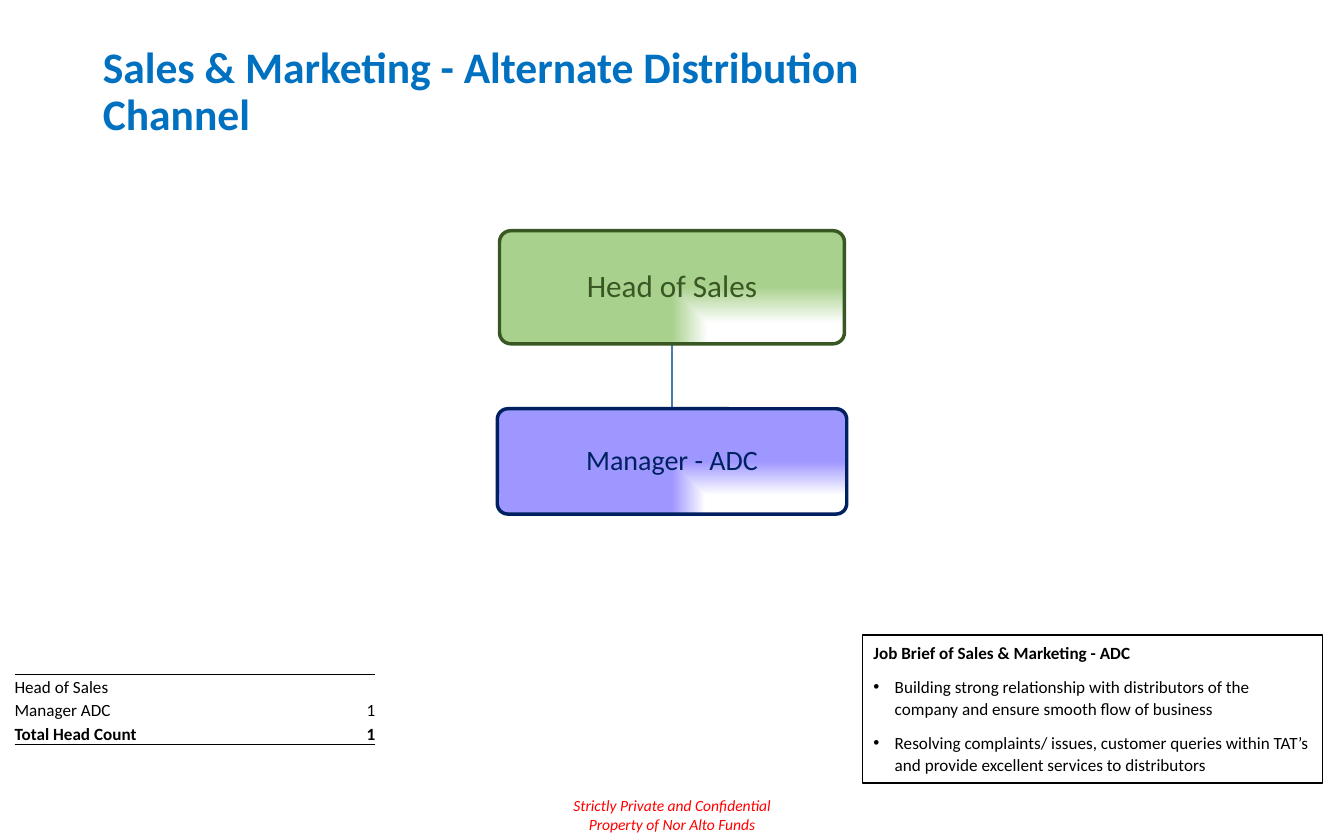
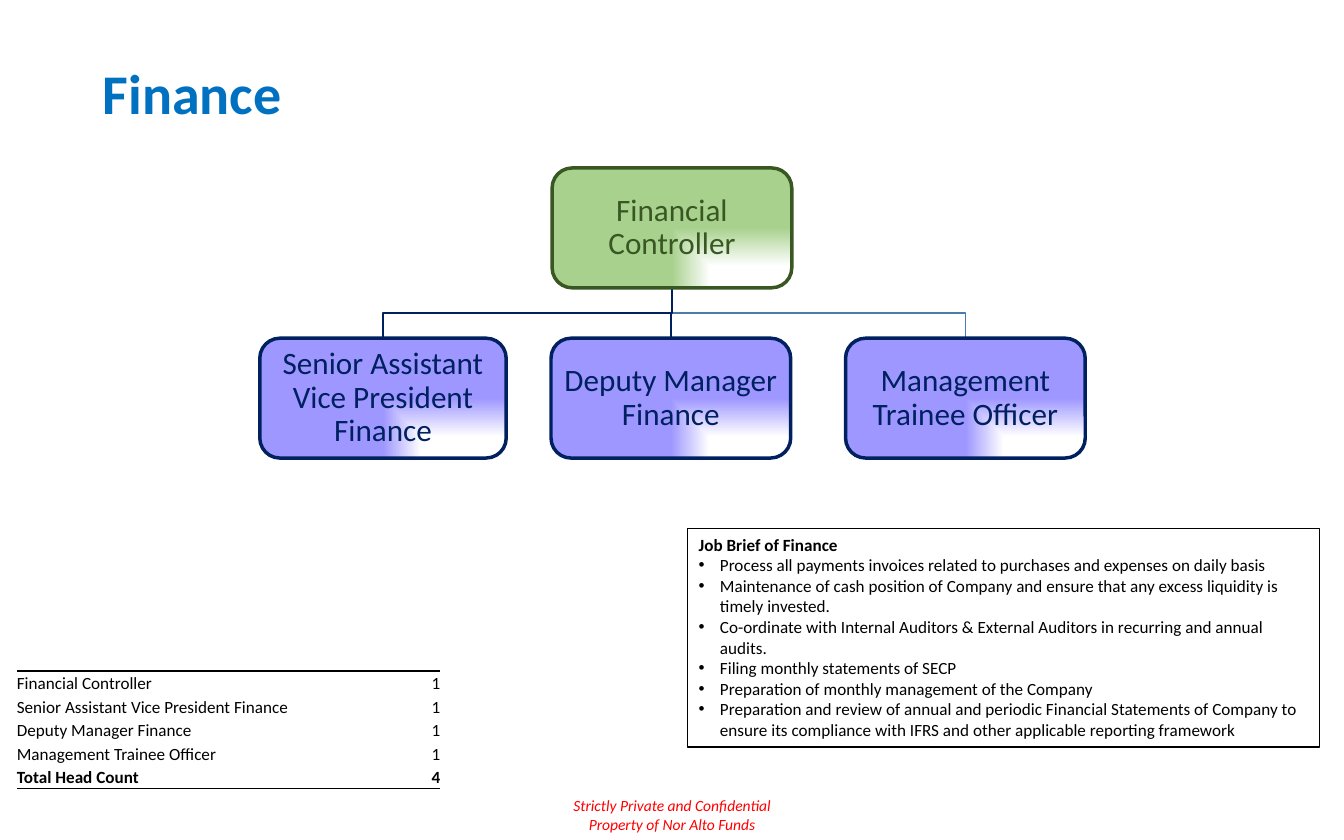
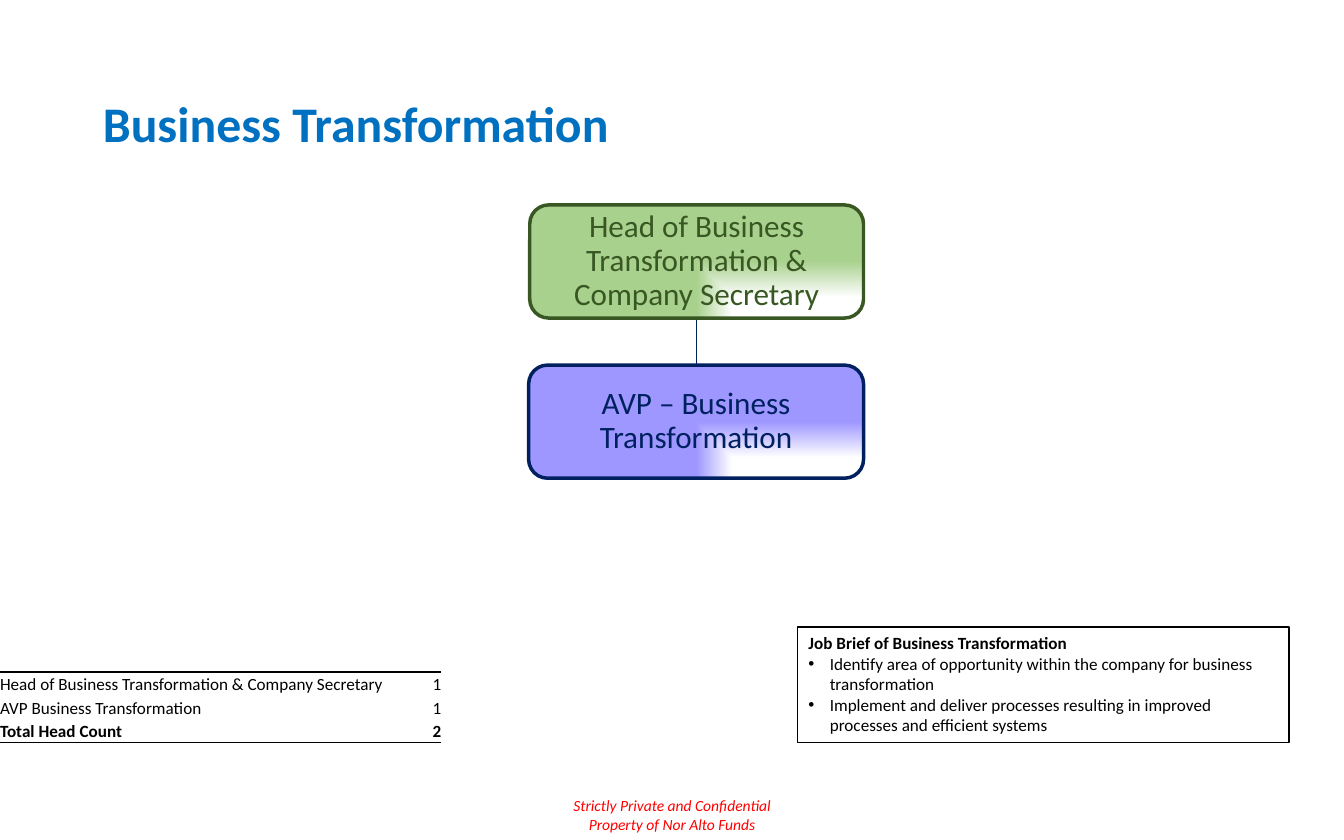
from lxml import etree
from pptx import Presentation
from pptx.dml.color import RGBColor
from pptx.enum.shapes import MSO_CONNECTOR, MSO_SHAPE
from pptx.enum.text import MSO_ANCHOR, MSO_AUTO_SIZE, PP_ALIGN
from pptx.oxml import parse_xml
from pptx.oxml.ns import nsdecls, qn
from pptx.util import Inches, Pt

ROUNDED, RECTANGLE = MSO_SHAPE.ROUNDED_RECTANGLE, MSO_SHAPE.RECTANGLE
STRAIGHT = MSO_CONNECTOR.STRAIGHT
LEFT, CENTER, RIGHT = PP_ALIGN.LEFT, PP_ALIGN.CENTER, PP_ALIGN.RIGHT
TOP, MIDDLE, BOTTOM = MSO_ANCHOR.TOP, MSO_ANCHOR.MIDDLE, MSO_ANCHOR.BOTTOM
FIT_SHAPE = MSO_AUTO_SIZE.SHAPE_TO_FIT_TEXT

# Shared look
FONT = "Calibri"
COLORS = {
    "title": "0070C0", "footer": "FF0000", "text": "000000", "paper": "FFFFFF",
    "head_fill": "A9D18E", "head_line": "385723",
    "member_fill": "9E97FF", "member_line": "002060", "link": "497CAB",
}
FOOTER = ["Strictly Private and Confidential", "Property of Nor Alto Funds"]

# Grid of 12 columns by 7.5 rows
SLIDE_WIDTH, SLIDE_HEIGHT = Inches(12), Inches(7.5)
COLUMN, ROW = SLIDE_WIDTH / 12, SLIDE_HEIGHT / 7.5
TABLE_ROW = 0.21


def place(frame):
    left, top, width, height = frame
    return (round(left * COLUMN), round(top * ROW),
            round(width * COLUMN), round(height * ROW))


def color(name):
    return RGBColor.from_string(COLORS[name])


def write(para, text, size, ink="text", align=LEFT, bold=False, italic=False, **spacing):
    """Fill one paragraph with a single styled run."""
    for name, value in {"alignment": align, **spacing}.items():
        setattr(para, name, value)
    if not text:
        etree.SubElement(para._p, qn("a:endParaRPr"), sz=str(size * 100))
        return
    span = para.add_run()
    span.text = text
    formats = {"name": FONT, "size": Pt(size), "bold": bold, "italic": italic}
    for name, value in formats.items():
        setattr(span.font, name, value)
    span.font.color.rgb = color(ink)


def set_frame(box, **formats):
    for name, value in formats.items():
        setattr(box.text_frame, name, value)
    return box.text_frame


def margins(size):
    return {f"margin_{side}": Inches(size) for side in ("left", "top", "right", "bottom")}


def set_line(shape, ink, width):
    shape.line.color.rgb = color(ink)
    shape.line.width = Pt(width)


# Title and footer
def add_title(page, text, size, frame):
    box = page.shapes.add_textbox(*place(frame))
    body = set_frame(box, word_wrap=True, vertical_anchor=MIDDLE)
    write(body.paragraphs[0], text, size, "title", bold=True, line_spacing=0.9)


def add_footer(page):
    box = page.shapes.add_textbox(*place((5.01, 7.06, 1.98, 0.44)))
    body = set_frame(box, word_wrap=False, auto_size=FIT_SHAPE)
    for index, line in enumerate(FOOTER):
        para = body.add_paragraph() if index else body.paragraphs[0]
        write(para, line, 10, "footer", CENTER, italic=True)


# Organisation chart
def fill_corner_gradient(shape, ink):
    stops = "".join(
        f'<a:gs pos="{share * 1000}"><a:srgbClr val="{COLORS[name]}"/></a:gs>'
        for share, name in ((0, "paper"), (36, "paper"), (100, ink)))
    gradient = parse_xml(
        f'<a:gradFill {nsdecls("a")} rotWithShape="1"><a:gsLst>{stops}</a:gsLst>'
        '<a:path path="rect"><a:fillToRect l="100000" t="100000"/></a:path>'
        '<a:tileRect r="-100000" b="-100000"/></a:gradFill>')
    shape.fill.background()
    properties = shape._element.spPr
    properties.replace(properties.find(qn("a:noFill")), gradient)


def add_role(page, role, text, frame, size, corner, inset):
    box = page.shapes.add_shape(ROUNDED, *place(frame))
    box.shadow.inherit = False
    box.adjustments[0] = corner
    fill_corner_gradient(box, f"{role}_fill")
    set_line(box, f"{role}_line", 2.25)
    body = set_frame(box, word_wrap=True, vertical_anchor=MIDDLE, **margins(inset))
    write(body.paragraphs[0], text, size, f"{role}_line", CENTER, line_spacing=0.9)


def add_link(page, head, member, ink, bent):
    """Join the bottom of the head to the top of a member."""
    left, top, width, height = place(head)
    member_left, end_y, member_width, _ = place(member)
    start_x, start_y = left + width // 2, top + height
    end_x = member_left + member_width // 2
    if bent:
        middle_y = (start_y + end_y) // 2
        builder = page.shapes.build_freeform(start_x, start_y)
        builder.add_line_segments(
            [(start_x, middle_y), (end_x, middle_y), (end_x, end_y)], close=False)
        link = builder.convert_to_shape()
        link.shadow.inherit = False
        link.fill.background()
    else:
        link = page.shapes.add_connector(STRAIGHT, start_x, start_y, start_x, end_y)
        etree.SubElement(link._element.spPr, qn("a:effectLst"))
    set_line(link, ink, 1)


def add_org_chart(page, head, members, member_size=20, corner=0.1667, inset=0.01):
    head_text, head_frame = head
    for _, frame, ink in members:
        add_link(page, head_frame, frame, ink, bent=len(members) > 1)
    add_role(page, "head", head_text, head_frame, 20, corner, inset)
    for text, frame, _ in members:
        add_role(page, "member", text, frame, member_size, corner, inset)


# Head count table
def set_borders(cell, ruled):
    properties = cell._tc.get_or_add_tcPr()
    for index, side in enumerate("LRTB"):
        paint = "<a:noFill/>"
        if side in ruled:
            paint = f'<a:solidFill><a:srgbClr val="{COLORS["text"]}"/></a:solidFill>'
        properties.insert(index, parse_xml(
            f'<a:ln{side} {nsdecls("a")} w="{Pt(1)}">{paint}</a:ln{side}>'))


def add_head_count(page, left, top, widths, counts):
    rows = counts + [("Total Head Count", str(sum(int(count or 0) for _, count in counts)))]
    frame = (left, top, sum(widths), TABLE_ROW * len(rows))
    table = page.shapes.add_table(len(rows), 2, *place(frame)).table
    table.first_row = table.horz_banding = False
    for column, width in zip(table.columns, widths):
        column.width = round(width * COLUMN)
    last = len(rows) - 1
    for index, values in enumerate(rows):
        table.rows[index].height = round(TABLE_ROW * ROW)
        ruled = {0: "T", last: "B"}.get(index, "")
        for cell, text, align in zip(table.rows[index].cells, values, (LEFT, RIGHT)):
            cell.fill.background()
            for name, value in {"vertical_anchor": BOTTOM, **margins(0)}.items():
                setattr(cell, name, value)
            set_borders(cell, ruled)
            write(cell.text_frame.paragraphs[0], text, 11, align=align, bold=index == last)


# Job brief
def add_bullet(para):
    properties = para._p.get_or_add_pPr()
    indent = Inches(0.19)
    properties.set("marL", str(indent))
    properties.set("indent", str(-indent))
    etree.SubElement(properties, qn("a:buFont"), typeface="Arial")
    etree.SubElement(properties, qn("a:buChar"), char="•")


def add_job_brief(page, unit, duties, frame, **spacing):
    box = page.shapes.add_shape(RECTANGLE, *place(frame))
    box.shadow.inherit = False
    box.fill.solid()
    box.fill.fore_color.rgb = color("paper")
    set_line(box, "text", 1)
    body = set_frame(box, word_wrap=True, vertical_anchor=TOP, auto_size=FIT_SHAPE)
    write(body.paragraphs[0], f"Job Brief of {unit}", 11, bold=True, **spacing)
    for duty in duties:
        para = body.add_paragraph()
        add_bullet(para)
        write(para, duty, 11, **spacing)


def add_page(deck, title, size, frame):
    page = deck.slides.add_slide(deck.slide_layouts[6])
    add_footer(page)
    add_title(page, title, size, frame)
    return page


def build_distribution(deck):
    page = add_page(deck, "Sales & Marketing - Alternate Distribution Channel", 28,
                    (0.82, 0.4, 8.01, 0.86))
    add_org_chart(page, ("Head of Sales", (4.46, 2.06, 3.08, 1.01)),
                  [("Manager - ADC", (4.44, 3.65, 3.12, 0.94), "link")],
                  member_size=18, corner=0.1, inset=0.08)
    add_head_count(page, 0.13, 6.02, (2.96, 0.26),
                   [("Head of Sales", ""), ("Manager ADC", "1")])
    add_job_brief(page, "Sales & Marketing - ADC", [
        "Building strong relationship with distributors of the company and ensure "
        "smooth flow of business",
        "Resolving complaints/ issues, customer queries within TAT’s and provide "
        "excellent services to distributors",
    ], (7.7, 5.67, 4.11, 1.32), line_spacing=1.07, space_after=Pt(8))


def build_finance(deck):
    page = add_page(deck, "Finance", 36, (0.82, 0.4, 2.43, 0.93))
    top, height = 3.02, 1.07
    head = "Financial Controller"
    members = [
        ("Management Trainee Officer", (7.55, top, 2.14, height), "link"),
        ("Deputy Manager Finance", (4.92, top, 2.14, height), "member_line"),
        ("Senior Assistant Vice President Finance", (2.32, top, 2.2, height), "member_line"),
    ]
    add_org_chart(page, (head, (4.93, 1.5, 2.14, height)), members)
    add_job_brief(page, "Finance", [
        "Process all payments invoices related to purchases and expenses on daily basis",
        "Maintenance of cash position of Company and ensure that any excess liquidity "
        "is timely invested.",
        "Co-ordinate with Internal Auditors & External Auditors in recurring and annual audits.",
        "Filing monthly statements of SECP",
        "Preparation of monthly management of the Company",
        "Preparation and review of annual and periodic Financial Statements of Company "
        "to ensure its compliance with IFRS and other applicable reporting framework",
    ], (6.14, 4.72, 5.64, 1.95))
    roles = [head] + [member[0] for member in reversed(members)]
    add_head_count(page, 0.15, 5.99, (3.28, 0.5), [(role, "1") for role in roles])


def build_transformation(deck):
    unit = "Business Transformation"
    page = add_page(deck, unit, 32, (0.82, 0.4, 10.35, 1.45))
    head = f"Head of {unit} & Company Secretary"
    add_org_chart(page, (head, (4.73, 1.83, 2.98, 1.01)),
                  [(f"AVP – {unit}", (4.72, 3.26, 2.99, 1.01), "member_line")])
    add_head_count(page, 0, 6, (3.62, 0.32), [(head, "1"), (f"AVP {unit}", "1")])
    add_job_brief(page, unit, [
        "Identify area of opportunity within the company for business transformation",
        "Implement and deliver processes resulting in improved processes and efficient systems",
    ], (7.12, 5.6, 4.39, 1.03))


def main():
    deck = Presentation()
    deck.slide_width, deck.slide_height = SLIDE_WIDTH, SLIDE_HEIGHT
    build_distribution(deck)
    build_finance(deck)
    build_transformation(deck)
    deck.save("out.pptx")


if __name__ == "__main__":
    main()
